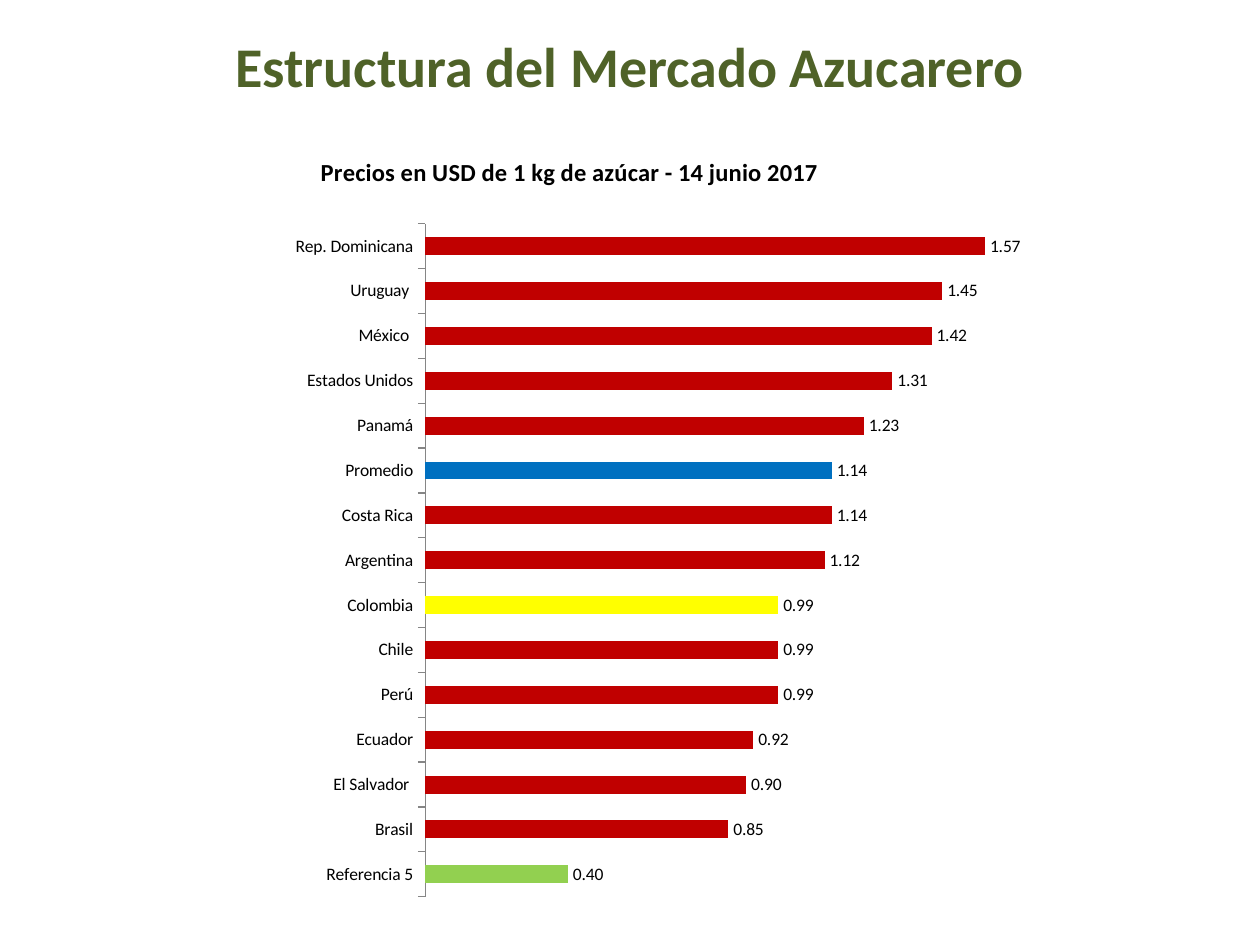
"""Build a slide with a bar chart of sugar prices by country."""
from pptx import Presentation
from pptx.chart.data import CategoryChartData
from pptx.dml.color import RGBColor
from pptx.enum.chart import XL_CHART_TYPE, XL_LABEL_POSITION, XL_TICK_MARK
from pptx.enum.text import MSO_ANCHOR, PP_ALIGN
from pptx.oxml import parse_xml
from pptx.oxml.ns import nsdecls
from pptx.util import Inches, Pt

BAR = XL_CHART_TYPE.BAR_CLUSTERED
OUT_END = XL_LABEL_POSITION.OUTSIDE_END
TICK_OUT = XL_TICK_MARK.OUTSIDE
MIDDLE = MSO_ANCHOR.MIDDLE
CENTER = PP_ALIGN.CENTER
FACE = "Calibri"


def style(font, size, color, bold=False):
    font.name, font.size, font.bold = FACE, Pt(size), bold
    font.color.rgb = RGBColor.from_string(color)


def place(node, index, **parts):
    """Give a chart part a fixed layout, in shares of the chart."""
    for old in node.xpath("c:layout"):
        node.remove(old)
    marks = "".join(f'<c:{k}Mode val="edge"/>' for k in "xy")
    marks += "".join(f'<c:{k} val="{v}"/>' for k, v in parts.items())
    target = '<c:layoutTarget val="inner"/>' if "w" in parts else ""
    node.insert(index, parse_xml(
        f'<c:layout {nsdecls("c")}><c:manualLayout>{target}{marks}'
        "</c:manualLayout></c:layout>"))


prices = {
    "Referencia 5": 0.40, "Brasil": 0.85, "El Salvador ": 0.90,
    "Ecuador": 0.92, "Perú": 0.99, "Chile": 0.99, "Colombia": 0.99,
    "Argentina": 1.12, "Costa Rica": 1.14, "Promedio": 1.14,
    "Panamá": 1.23, "Estados Unidos": 1.31, "México ": 1.42,
    "Uruguay ": 1.45, "Rep. Dominicana": 1.57,
}
accents = {"Referencia 5": "92D050", "Colombia": "FFFF00", "Promedio": "0070C0"}

deck = Presentation()
deck.slide_width, deck.slide_height = Inches(10), Inches(7.5)
slide = deck.slides.add_slide(deck.slide_layouts[5])

title = slide.shapes.title
title.left, title.top = Inches(0.5), Inches(0.13)
title.width, title.height = Inches(9), Inches(0.77)
frame = title.text_frame
frame.vertical_anchor = MIDDLE
para = frame.paragraphs[0]
para.alignment = CENTER
run = para.add_run()
run.text = "Estructura del Mercado Azucarero"
style(run.font, 32, "4F6228", True)

data = CategoryChartData(number_format="#,##0.00")
data.categories = list(prices)
data.add_series("Series 1", list(prices.values()))
chart = slide.shapes.add_chart(
    BAR, Inches(1.54), Inches(1.07), Inches(6.93), Inches(6.14), data).chart
style(chart.font, 10, "000000")
chart.has_legend = False

chart.has_title = True
run = chart.chart_title.text_frame.paragraphs[0].add_run()
run.text = "Precios en USD de 1 kg de azúcar - 14 junio 2017"
style(run.font, 14, "000000", True)
chart.chart_title.include_in_layout = False
place(chart.chart_title.element, 1, x=0.14, y=0.02)
place(chart.element.xpath("c:chart/c:plotArea")[0], 0,
      x=0.265, y=0.115, w=0.735, h=0.87)

axis = chart.category_axis
axis.major_tick_mark = TICK_OUT
axis.format.line.color.rgb = RGBColor.from_string("868686")
scale = chart.value_axis
scale.minimum_scale, scale.maximum_scale = 0, 1.8
scale.has_major_gridlines = False
scale.visible = False

plot = chart.plots[0]
plot.gap_width = 150
plot.vary_by_categories = False
plot.has_data_labels = True
labels = plot.data_labels
labels.show_value = True
labels.number_format, labels.number_format_is_linked = "#,##0.00", False
labels.position = OUT_END
style(labels.font, 10, "000000")

series = plot.series[0]
series.invert_if_negative = False
fills = [(series, "C00000")]
fills += [(series.points[i], accents[name])
          for i, name in enumerate(prices) if name in accents]
for part, color in fills:
    part.format.fill.solid()
    part.format.fill.fore_color.rgb = RGBColor.from_string(color)

deck.save("out.pptx")
